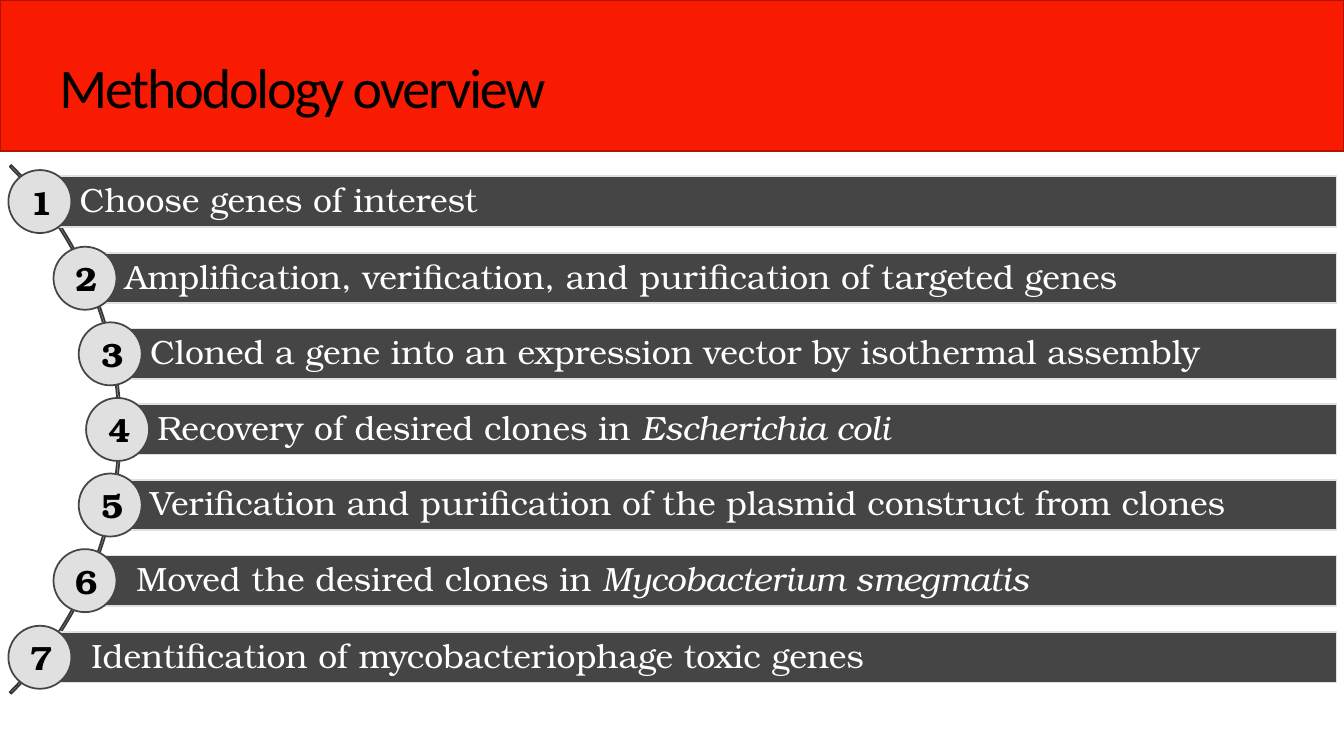
from dataclasses import dataclass
from math import sqrt

from pptx import Presentation
from pptx.dml.color import RGBColor
from pptx.enum.shapes import MSO_SHAPE
from pptx.enum.text import MSO_ANCHOR, PP_ALIGN
from pptx.util import Pt

SCALE = 9525


@dataclass(frozen=True)
class Theme:
    red: str = "F81B02"
    maroon: str = "AF1301"
    dark: str = "454545"
    arc: str = "373737"
    pale: str = "E0E0E0"
    white: str = "FFFFFF"
    black: str = "000000"
    serif: str = "TeX Gyre Bonum"
    sans: str = "Calibri"
    head: int = 40
    body: int = 24
    line: float = 1.25


THEME = Theme()
STEPS = [
    ("Choose genes of interest", "", 0),
    ("Amplification, verification, and purification of targeted genes", "", 0),
    ("Cloned a gene into an expression vector by isothermal assembly", "", 0),
    ("Recovery of desired clones in ", "Escherichia coli", 0),
    ("Verification and purification of the plasmid construct from clones", "", 0),
    ("Moved the desired clones in ", "Mycobacterium smegmatis", 11),
    ("Identification of mycobacteriophage toxic genes", "", 11),
]
HUB_X, HUB_Y = -241, 409
RADIUS = 353
ARC = 712
SPAN = 433
BAR = 48
DISC = 60
RIGHT = 1273


def px(*sizes):
    return [round(size) * SCALE for size in sizes]


def add_form(slide, kind, box, fill, line):
    form = slide.shapes.add_shape(kind, *px(*box))
    form.shadow.inherit = False
    if fill:
        form.fill.solid()
        form.fill.fore_color.rgb = RGBColor.from_string(fill)
    else:
        form.fill.background()
    form.line.color.rgb = RGBColor.from_string(line)
    form.line.width = Pt(THEME.line)
    return form


def set_frame(form, insets, wrap=True, align=PP_ALIGN.LEFT, space=1.0):
    frame = form.text_frame
    frame.word_wrap = wrap
    frame.vertical_anchor = MSO_ANCHOR.MIDDLE
    (frame.margin_left, frame.margin_top,
     frame.margin_right, frame.margin_bottom) = px(*insets)
    line = frame.paragraphs[0]
    line.alignment = align
    line.line_spacing = space
    return line


def add_run(line, text, color, face=THEME.serif, size=THEME.body,
            bold=False, italic=False):
    run = line.add_run()
    run.text = text
    font = run.font
    font.name, font.size = face, Pt(size)
    font.bold, font.italic = bold, italic
    font.color.rgb = RGBColor.from_string(color)
    return run


def add_arc(slide):
    box = (HUB_X - ARC / 2, HUB_Y - ARC / 2, ARC, ARC)
    arc = add_form(slide, MSO_SHAPE.BLOCK_ARC, box, None, THEME.arc)
    for index, value in enumerate((189, 27, 0.003)):
        arc.adjustments[index] = value


def add_step(slide, index, plain, species, indent):
    drop = SPAN * (index / (len(STEPS) - 1) - 0.5)
    left = HUB_X + sqrt(RADIUS ** 2 - drop ** 2)
    mid = HUB_Y + drop

    bar = add_form(slide, MSO_SHAPE.RECTANGLE,
                   (left, mid - BAR / 2, RIGHT - left, BAR),
                   THEME.dark, THEME.pale)
    line = set_frame(bar, (38 + indent, 7, 7, 7), space=0.9)
    add_run(line, plain, THEME.white)
    if species:
        add_run(line, species, THEME.white, italic=True)

    disc = add_form(slide, MSO_SHAPE.OVAL,
                    (left - DISC / 2, mid - DISC / 2, DISC, DISC),
                    THEME.pale, THEME.dark)
    line = set_frame(disc, (4, 0, 0, 0), wrap=False, align=PP_ALIGN.CENTER)
    add_run(line, str(index + 1), THEME.black, bold=True)


def add_title(slide, text):
    add_form(slide, MSO_SHAPE.RECTANGLE, (0, 0, 1280, 144),
             THEME.red, THEME.maroon)
    title = slide.shapes.add_textbox(*px(0, -2, 576, 178))
    line = set_frame(title, (24, 24, 24, 24), align=PP_ALIGN.CENTER, space=0.85)
    run = add_run(line, text, THEME.black, THEME.sans, THEME.head)
    run.font._element.set("spc", "-150")


def main():
    deck = Presentation()
    deck.slide_width, deck.slide_height = px(1280, 720)
    slide = deck.slides.add_slide(deck.slide_layouts[6])
    add_arc(slide)
    for index, step in enumerate(STEPS):
        add_step(slide, index, *step)
    add_title(slide, "Methodology overview")
    deck.save("out.pptx")


if __name__ == "__main__":
    main()
